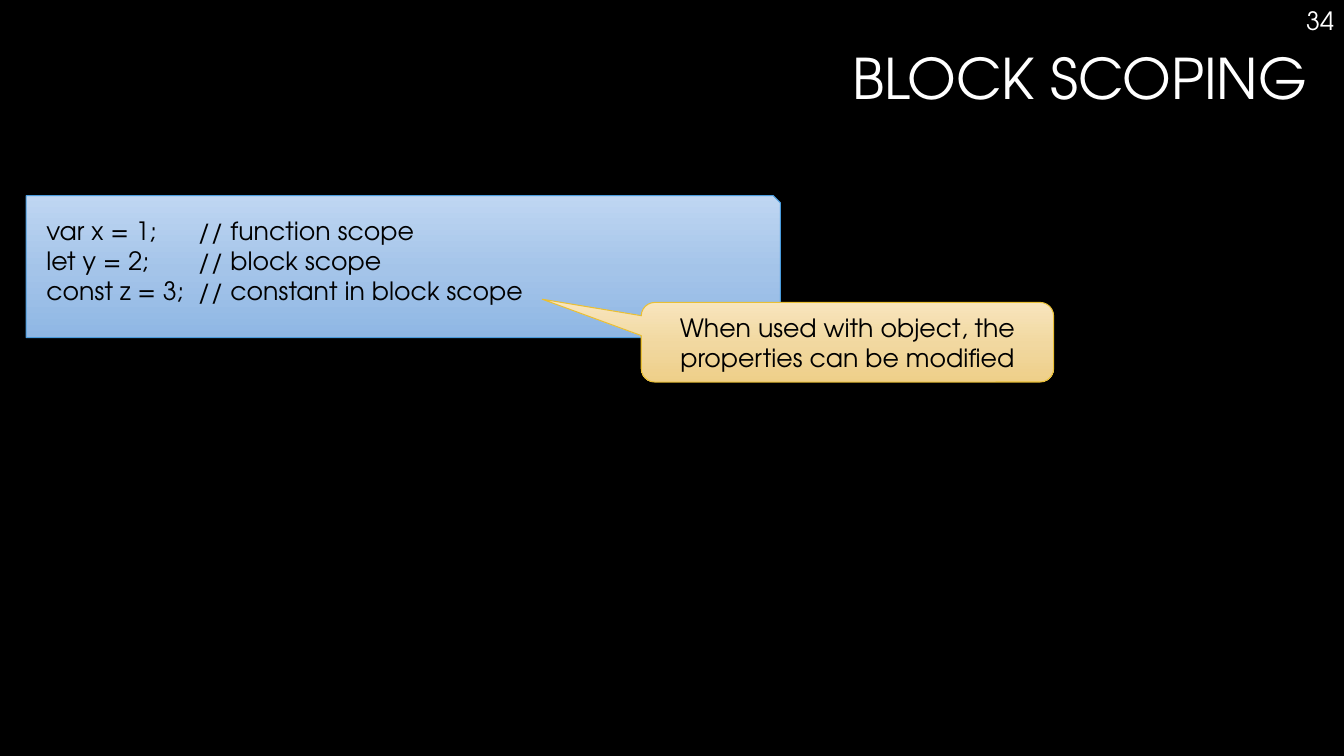
from copy import deepcopy
from dataclasses import dataclass

from lxml.etree import SubElement
from pptx import Presentation
from pptx.dml.color import RGBColor
from pptx.enum.shapes import MSO_SHAPE as Preset
from pptx.enum.text import MSO_ANCHOR as Anchor, PP_ALIGN as Align
from pptx.oxml.ns import qn
from pptx.util import Inches, Pt


@dataclass(frozen=True)
class Theme:
    font: str = "TeX Gyre Adventor"
    background: str = "000000"
    light_text: str = "FFFFFF"
    dark_text: str = "000000"
    blue: tuple = ("BFD6F2", "A4C4E9", "8FB7E4")
    blue_line: str = "4A9BDC"
    gold: tuple = ("F8E5BD", "F1D8A0", "EECF89")
    gold_line: str = "E9BF35"
    title_size: int = 40
    body_size: int = 18


THEME = Theme()
GRADIENT_POSITIONS = (0, 0.52, 1)


def rgb(value):
    return RGBColor.from_string(value)


def write(shape, lines, size, color, align, anchor=Anchor.TOP):
    frame = shape.text_frame
    frame.word_wrap = True
    frame.vertical_anchor = anchor
    frame.text = "\n".join(lines)
    for paragraph in frame.paragraphs:
        paragraph.alignment = align
        paragraph.font.name = THEME.font
        paragraph.font.size = Pt(size)
        paragraph.font.color.rgb = rgb(color)
    return frame


def add_label(slide, box, text, size):
    label = slide.shapes.add_textbox(*map(Inches, box))
    return write(label, [text], size, THEME.light_text, Align.RIGHT)


def fill_gradient(shape, colors):
    shape.fill.gradient()
    shape.fill.gradient_angle = 270
    first_stop = next(shape._element.spPr.iter(qn("a:gs")))
    first_stop.addnext(deepcopy(first_stop))
    stops = shape.fill.gradient_stops
    for stop, position, color in zip(stops, GRADIENT_POSITIONS, colors):
        stop.position = position
        stop.color.rgb = rgb(color)


def add_panel(slide, preset, box, adjustments, colors, line):
    panel = slide.shapes.add_shape(preset, *map(Inches, box))
    for index, value in enumerate(adjustments):
        panel.adjustments[index] = value
    panel.shadow.inherit = False
    fill_gradient(panel, colors)
    panel.line.color.rgb = rgb(line)
    panel.line.width = Pt(0.75)
    return panel


def add_tab_stop(paragraph, position):
    properties = paragraph._p.get_or_add_pPr()
    tabs = SubElement(properties, qn("a:tabLst"))
    SubElement(tabs, qn("a:tab"), pos=str(Inches(position)), algn="l")
    properties.insert(0, tabs)


def add_code(slide, box, lines):
    code = add_panel(slide, Preset.SNIP_1_RECTANGLE, box, [0.05],
                     THEME.blue, THEME.blue_line)
    frame = write(code, lines, THEME.body_size, THEME.dark_text, Align.LEFT)
    frame.margin_left = frame.margin_right = frame.margin_bottom = Inches(0.2)
    frame.margin_top = Inches(0.16)
    for paragraph in frame.paragraphs:
        add_tab_stop(paragraph, 1.5)


def add_callout(slide, box, pointer, text):
    callout = add_panel(slide, Preset.ROUNDED_RECTANGULAR_CALLOUT, box,
                        [*pointer, 0.17], THEME.gold, THEME.gold_line)
    write(callout, [text], THEME.body_size, THEME.dark_text,
          Align.CENTER, Anchor.MIDDLE)


def main():
    deck = Presentation()
    deck.slide_width, deck.slide_height = Inches(13.33), Inches(7.5)
    slide = deck.slides.add_slide(deck.slide_layouts[6])
    slide.background.fill.solid()
    slide.background.fill.fore_color.rgb = rgb(THEME.background)

    title = add_label(slide, (0.26, 0.46, 12.81, 1.41), "BLOCK SCOPING",
                      THEME.title_size)
    title.paragraphs[0].line_spacing = 0.9
    add_label(slide, (10.45, 0, 2.88, 0.4), "34", THEME.body_size)
    add_code(slide, (0.26, 1.94, 7.48, 1.41), [
        "var x = 1;\t// function scope",
        "let y = 2;\t// block scope",
        "const z = 3;\t// constant in block scope",
    ])
    add_callout(slide, (6.36, 3, 4.09, 0.79), (-0.74, -0.54),
                "When used with object, the properties can be modified")
    deck.save("out.pptx")


if __name__ == "__main__":
    main()
